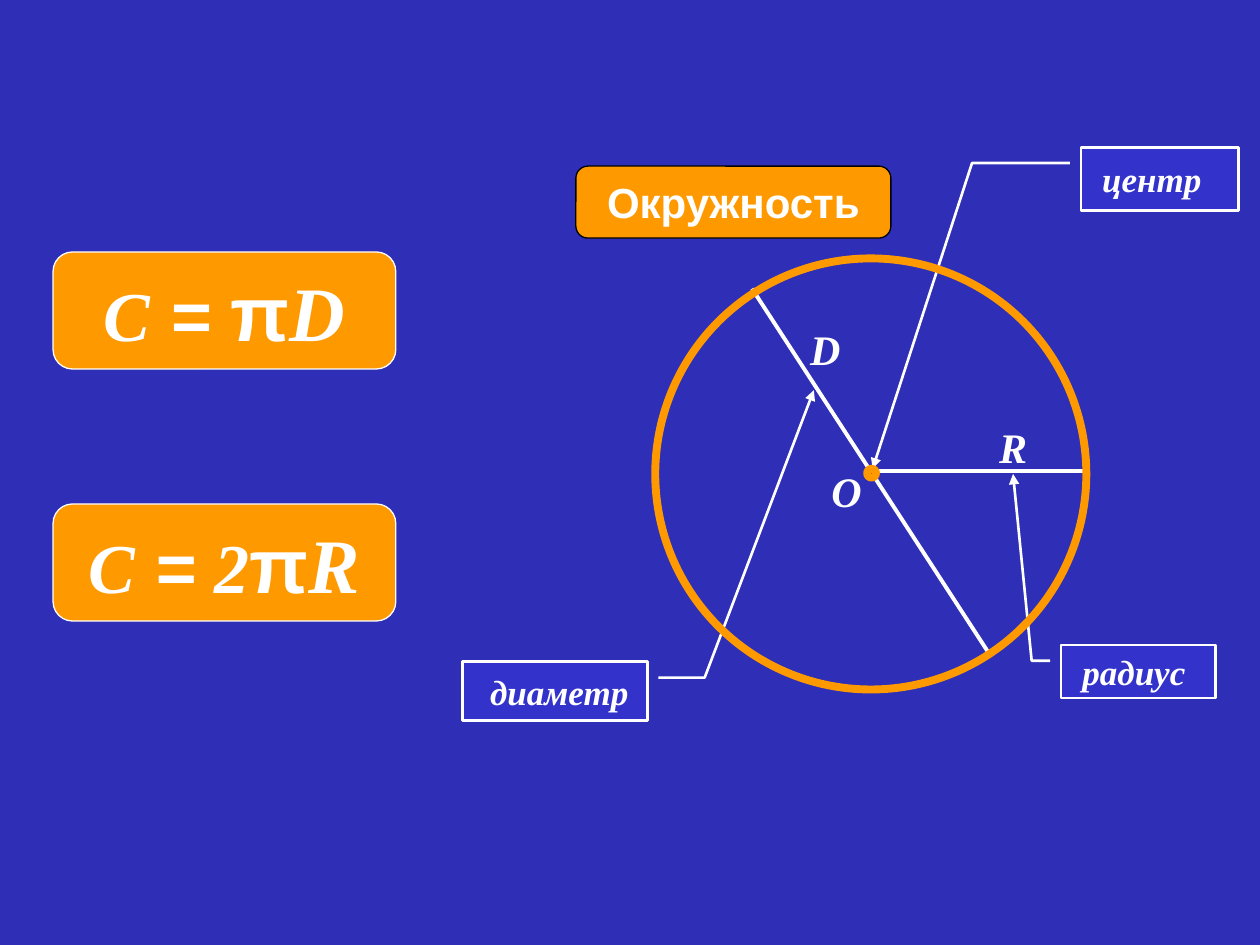
from dataclasses import dataclass

from lxml import etree
from pptx import Presentation
from pptx.dml.color import RGBColor
from pptx.enum import shapes, text
from pptx.oxml.ns import qn
from pptx.util import Cm, Pt


@dataclass(frozen=True)
class Theme:
    background: RGBColor = RGBColor(0x2E, 0x2E, 0xB6)
    callout: RGBColor = RGBColor(0x33, 0x33, 0xCC)
    accent: RGBColor = RGBColor(0xFF, 0x99, 0x00)
    white: RGBColor = RGBColor(0xFF, 0xFF, 0xFF)
    black: RGBColor = RGBColor(0, 0, 0)
    serif: str = "Times New Roman"
    sans: str = "Arial"
    callout_size: Pt = Pt(20)
    label_size: Pt = Pt(24)
    formula_size: Pt = Pt(40)
    symbol_size: Pt = Pt(44)


theme = Theme()
SHAPE = shapes.MSO_SHAPE


def add_shape(parent, kind, box, fill, line, width):
    s = parent.add_shape(kind, *(Cm(v) for v in box))
    s.shadow.inherit = False
    if fill is None:
        s.fill.background()
    else:
        s.fill.solid()
        s.fill.fore_color.rgb = fill
    s.line.color.rgb = line
    s.line.width = Pt(width)
    s.text_frame.vertical_anchor = text.MSO_ANCHOR.MIDDLE
    return s


def add_run(p, words, size, name=theme.serif, italic=True):
    r = p.add_run()
    r.text = words
    r.font.name, r.font.size = name, size
    r.font.bold, r.font.italic = True, italic
    r.font.color.rgb = theme.white


prs = Presentation()
prs.slide_width, prs.slide_height = Cm(25.4), Cm(19.05)
slide = prs.slides.add_slide(prs.slide_layouts[6])
slide.background.fill.solid()
slide.background.fill.fore_color.rgb = theme.background

# Radius and diameter
for ends in [(17.6, 9.5, 21.95, 9.5), (15.16, 5.82, 19.91, 13.13)]:
    c = slide.shapes.add_connector(shapes.MSO_CONNECTOR.STRAIGHT, *(Cm(v) for v in ends))
    c.line.color.rgb = theme.white
    c.line.width = Pt(2.25)
    etree.SubElement(c.element.spPr, qn("a:effectLst"))

# Callouts: each leader is given as y, x fractions of its box
LEFT, CENTER = text.PP_ALIGN.LEFT, text.PP_ALIGN.CENTER
callouts = [
    ("диаметр", (9.32, 13.34, 3.73, 1.19), CENTER, (0.27, 1.06, 0.27, 1.31, -4.6, 1.9)),
    ("центр", (21.79, 2.97, 3.18, 1.27), LEFT, (0.25, -0.07, 0.25, -0.69, 5.1, -1.32)),
    ("радиус", (21.39, 13, 3.12, 1.07), LEFT, (0.3, -0.07, 0.3, -0.19, -3.22, -0.31)),
]
for words, box, align, leader in callouts:
    s = add_shape(slide.shapes, SHAPE.LINE_CALLOUT_2, box, theme.callout, theme.white, 1.5)
    for i, value in enumerate(leader):
        s.adjustments[i] = value
    etree.SubElement(s.element.spPr.find(qn("a:ln")), qn("a:tailEnd"), type="triangle")
    s.text_frame.margin_left = Cm(0.43)
    p = s.text_frame.paragraphs[0]
    p.alignment = align
    add_run(p, words, theme.callout_size)

title = add_shape(slide.shapes, SHAPE.ROUNDED_RECTANGLE, (11.61, 3.35, 6.35, 1.45),
                  theme.accent, theme.black, 0.75)
p = title.text_frame.paragraphs[0]
p.alignment = CENTER
add_run(p, "Окружность", theme.label_size, theme.sans, italic=False)

# Circle with its centre
circle = slide.shapes.add_group_shape()
add_shape(circle.shapes, SHAPE.OVAL, (17.48, 9.45, 0.18, 0.18), theme.black, theme.accent, 4.5)
add_shape(circle.shapes, SHAPE.OVAL, (13.21, 5.21, 8.69, 8.69), None, theme.accent, 4.5)

labels = [
    ("R", (19.89, 7.98, 1.07, 2.06), text.MSO_ANCHOR.MIDDLE),
    ("D", (16.08, 6.4, 1.7, 1.07), text.MSO_ANCHOR.TOP),
    ("O", (16.51, 9.25, 2.46, 1.68), text.MSO_ANCHOR.TOP),
]
for letter, box, anchor in labels:
    tf = slide.shapes.add_textbox(*(Cm(v) for v in box)).text_frame
    tf.word_wrap = True
    tf.vertical_anchor = anchor
    add_run(tf.paragraphs[0], letter, theme.label_size)

# Circumference formulas
for top, factor, letter in [(5.08, "", "D"), (10.16, "2", "R")]:
    s = add_shape(slide.shapes, SHAPE.ROUNDED_RECTANGLE, (1.07, top, 6.91, 2.36),
                  theme.accent, theme.white, 0.75)
    p = s.text_frame.paragraphs[0]
    p.alignment = CENTER
    add_run(p, "C", theme.formula_size)
    add_run(p, " = ", theme.formula_size, theme.sans)
    if factor:
        add_run(p, factor, theme.formula_size)
    add_run(p, "π", theme.symbol_size, theme.sans, italic=False)
    add_run(p, letter, theme.symbol_size)

prs.save("out.pptx")
